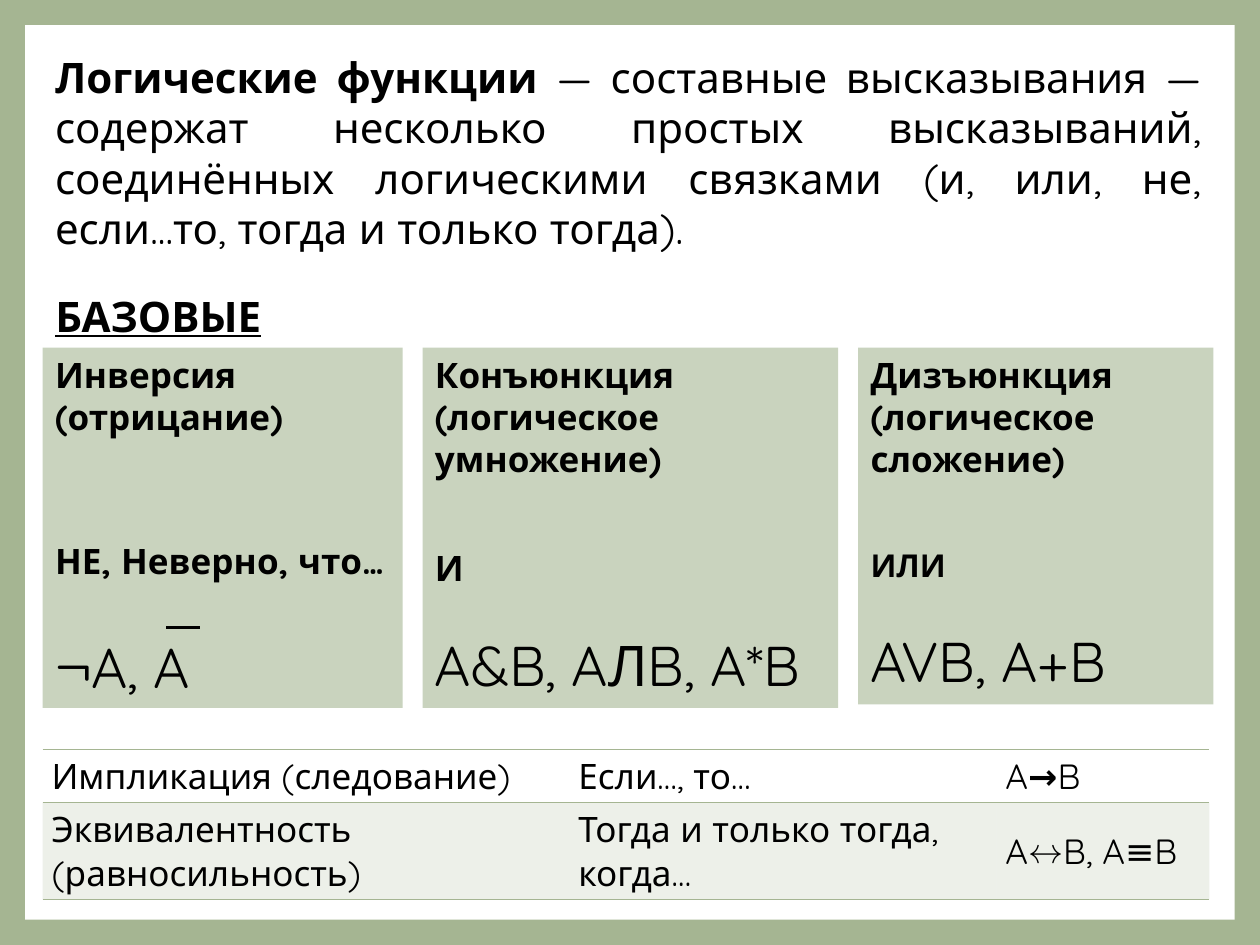
from lxml import etree
from pptx import Presentation
from pptx import util as u
from pptx.dml.color import RGBColor
from pptx.enum import shapes, text
from pptx.oxml.ns import qn

FONT = "Quicksand"
GREEN, PALE, WHITE, BLACK = "A5B592", "C9D3BE", "FFFFFF", "000000"
LEFT = 0.86
PLAIN_TABLE = "{2D5ABB26-0587-4C30-8999-92F81FD0307C}"


def paint(fill, colour):
    fill.solid()
    fill.fore_color.rgb = RGBColor.from_string(colour)


def place(left, top, width, height):
    return [u.Cm(value) for value in (left, top, width, height)]


def add_span(para, words, size, bold=False, underline=None):
    span = para.add_run()
    span.text = words
    font = span.font
    font.name, font.size, font.bold, font.underline = FONT, u.Pt(size), bold, underline
    font.color.rgb = RGBColor.from_string(BLACK)


def set_frame(frame, wrap=True):
    frame.word_wrap = wrap
    frame.auto_size = text.MSO_AUTO_SIZE.SHAPE_TO_FIT_TEXT
    frame.vertical_anchor = text.MSO_ANCHOR.TOP


def add_panel(page, bounds, colour):
    panel = page.shapes.add_shape(shapes.MSO_SHAPE.RECTANGLE, *place(*bounds))
    panel.shadow.inherit = False
    paint(panel.fill, colour)
    panel.line.fill.background()
    return panel


def add_heading(page):
    title = page.shapes.title
    title.left, title.top, title.width, title.height = place(LEFT, 5.72, 9.63, 1.28)
    set_frame(title.text_frame)
    para = title.text_frame.paragraphs[0]
    para.alignment = text.PP_ALIGN.LEFT
    add_span(para, "БАЗОВЫЕ", 24, True, True)


def add_definition(page):
    box = page.shapes.add_textbox(*place(LEFT, 0.91, 23.6, 4.37))
    set_frame(box.text_frame)
    para = box.text_frame.paragraphs[0]
    para.alignment = text.PP_ALIGN.JUSTIFY
    add_span(para, "Логические функции ", 24, True)
    add_span(para, "— составные высказывания — содержат несколько простых "
             "высказываний, соединённых логическими связками (и, или, не, "
             "если...то, тогда и только тогда).", 24)


def add_card(page, left, width, height, lines):
    """Each line is (words, size, bold, space before)."""
    card = add_panel(page, (left, 7.01, width, height), PALE)
    frame = card.text_frame
    set_frame(frame)
    for index, (words, size, bold, gap) in enumerate(lines):
        para = frame.add_paragraph() if index else frame.paragraphs[0]
        para.alignment = text.PP_ALIGN.LEFT
        para.space_before = u.Pt(gap)
        add_span(para, words, size, bold)


def add_overbar(page):
    bar = page.shapes.add_connector(
        shapes.MSO_CONNECTOR.STRAIGHT, *place(3.35, 12.65, 4.04, 12.65))
    bar.line.width = u.Pt(1.5)
    paint(bar.line.fill, BLACK)
    etree.SubElement(bar.element.spPr, qn("a:effectLst"))


def add_border(cell, side):
    line = etree.Element(qn("a:" + side), w=str(u.Pt(1)))
    fill = etree.SubElement(line, qn("a:solidFill"))
    etree.SubElement(fill, qn("a:srgbClr"), val=GREEN)
    cell._tc.get_or_add_tcPr().insert(0, line)


def fill_cell(cell, spans, row, column):
    cell.margin_left = cell.margin_right = u.Cm(0.18)
    cell.margin_top = cell.margin_bottom = u.Cm(0.1)
    if column:
        cell.vertical_anchor = text.MSO_ANCHOR.MIDDLE
    for words, bold in spans:
        add_span(cell.text_frame.paragraphs[0], words, 20, bold)
    add_border(cell, "lnB")
    if row == 0:
        add_border(cell, "lnT")
        cell.fill.background()
    else:
        paint(cell.fill, GREEN)
        colour = cell._tc.tcPr.find(qn("a:solidFill"))[0]
        etree.SubElement(colour, qn("a:alpha"), val="20000")


def add_operations_table(page):
    rows = [
        [[("Импликация (следование)", False)],
         [("Если…, то…", False)],
         [("A", False), ("→", True), ("B", False)]],
        [[("Эквивалентность (равносильность)", False)],
         [("Тогда и только тогда, когда…", False)],
         [("A", False), ("↔", True), ("B, A≡B", False)]],
    ]
    holder = page.shapes.add_table(2, 3, *place(LEFT, 15.11, 23.52, 3.02))
    table = holder.table
    table.first_row = table.horz_banding = False
    table._tbl.tblPr.find(qn("a:tableStyleId")).text = PLAIN_TABLE
    for column, width in zip(table.columns, (10.62, 8.61, 4.29)):
        column.width = u.Cm(width)
    for line, height in zip(table.rows, (1.07, 1.95)):
        line.height = u.Cm(height)
    for row, cells in enumerate(rows):
        for column, spans in enumerate(cells):
            fill_cell(table.cell(row, column), spans, row, column)


def main():
    deck = Presentation()
    deck.slide_width, deck.slide_height = u.Cm(25.4), u.Cm(19.05)
    page = deck.slides.add_slide(deck.slide_layouts[5])
    paint(page.background.fill, GREEN)

    # White sheet, kept behind the heading
    sheet = add_panel(page, (0.51, 0.51, 24.38, 18.03), WHITE)
    page.shapes.title.element.addprevious(sheet.element)

    add_definition(page)
    add_heading(page)

    # Basic operations
    add_card(page, LEFT, 7.26, 7.26, [
        ("Инверсия", 20, True, 0), ("(отрицание)", 20, True, 0),
        ("НЕ, Неверно, что…", 20, True, 58), ("¬A, A", 32, False, 29)])
    add_card(page, 8.52, 8.38, 7.26, [
        ("Конъюнкция (логическое умножение)", 20, True, 0),
        ("И", 20, True, 38), ("A&B, AЛB, A*B", 32, False, 24)])
    add_card(page, 17.3, 7.16, 7.19, [
        ("Дизъюнкция (логическое сложение)", 20, True, 0),
        ("ИЛИ", 18, True, 38), ("AVB, A+B", 32, False, 24)])
    add_overbar(page)

    # Further operations
    add_operations_table(page)
    deck.save("out.pptx")


if __name__ == "__main__":
    main()
